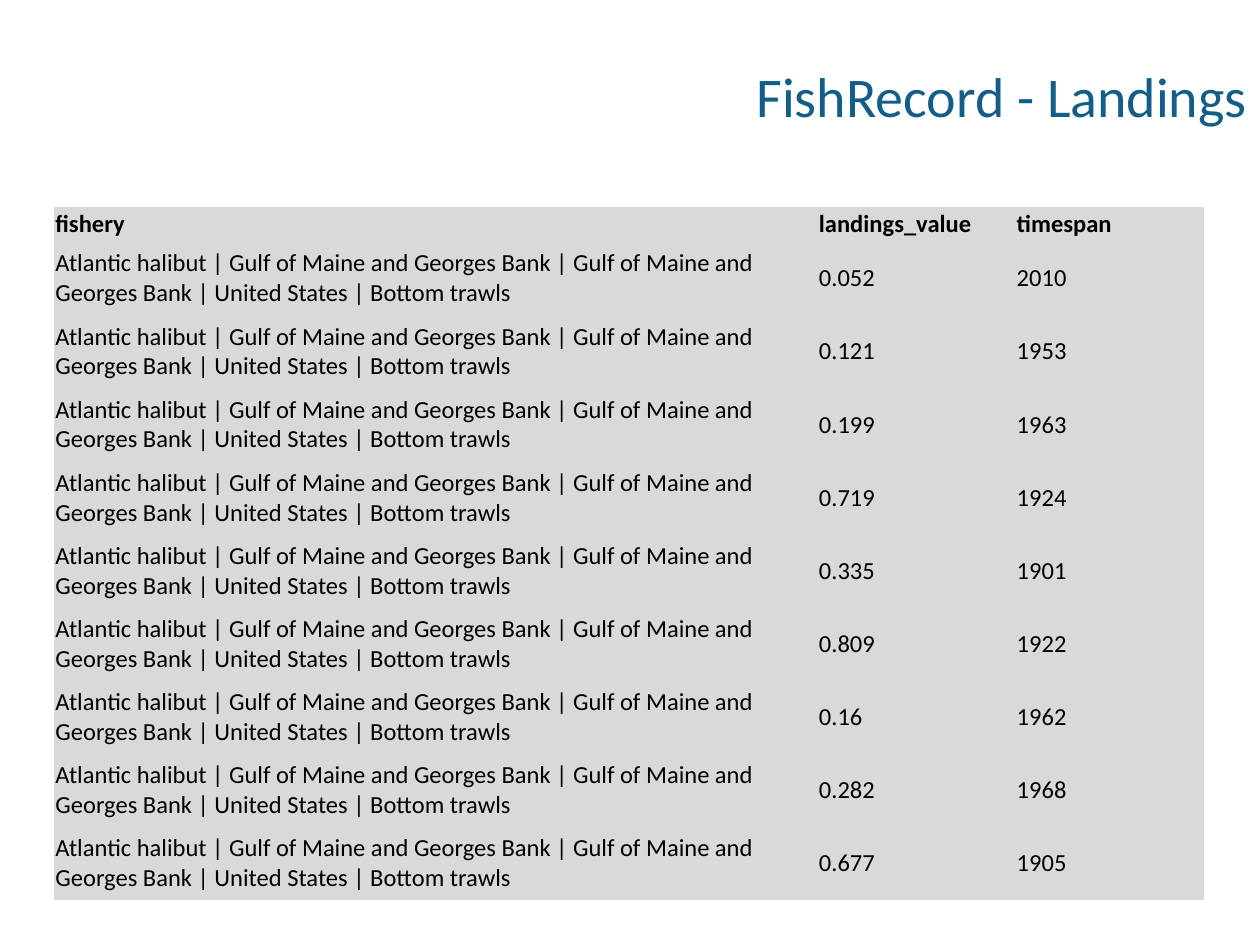
from pptx import Presentation
from pptx.dml.color import RGBColor
from pptx.enum import text
from pptx.util import Inches, Pt

FONT = "Calibri"
FISHERY = ("Atlantic halibut | Gulf of Maine and Georges Bank | "
           "Gulf of Maine and Georges Bank | United States | Bottom trawls")
HEADINGS = ("fishery", "landings_value", "timespan")
LANDINGS = [
    ("0.052", "2010"),
    ("0.121", "1953"),
    ("0.199", "1963"),
    ("0.719", "1924"),
    ("0.335", "1901"),
    ("0.809", "1922"),
    ("0.16", "1962"),
    ("0.282", "1968"),
    ("0.677", "1905"),
]
COLUMN_WIDTHS = (6.06, 1.57, 1.5)
HEADING_HEIGHT, ROW_HEIGHT = 0.28, 0.58
NO_STYLE_NO_GRID = "{2D5ABB26-0587-4C30-8999-92F81FD0307C}"


def color(hex_code):
    return RGBColor.from_string(hex_code)


def add_run(paragraph, wording, size, hex_code, bold=False):
    run = paragraph.add_run()
    run.text = wording
    run.font.name = FONT
    run.font.size = Pt(size)
    run.font.bold = bold
    run.font.color.rgb = color(hex_code)


def set_title(slide, wording):
    title = slide.shapes.title
    title.left, title.top = Inches(2.83), Inches(0.13)
    title.width, title.height = Inches(7.17), Inches(1.25)
    title.text_frame.vertical_anchor = text.MSO_ANCHOR.MIDDLE
    paragraph = title.text_frame.paragraphs[0]
    paragraph.alignment = text.PP_ALIGN.RIGHT
    add_run(paragraph, wording, 32, "125E89")


def fill_cell(cell, wording, bold):
    cell.fill.solid()
    cell.fill.fore_color.rgb = color("D9D9D9")
    cell.vertical_anchor = text.MSO_ANCHOR.MIDDLE
    cell.margin_left = cell.margin_right = Inches(0.01)
    cell.margin_top = cell.margin_bottom = 0
    add_run(cell.text_frame.paragraphs[0], wording, 14, "000000", bold)


def add_landings_table(slide):
    rows = [HEADINGS] + [(FISHERY, *landing) for landing in LANDINGS]
    heights = [HEADING_HEIGHT] + [ROW_HEIGHT] * len(LANDINGS)
    table = slide.shapes.add_table(
        len(rows), len(HEADINGS), Inches(0.43), Inches(1.64),
        Inches(sum(COLUMN_WIDTHS)), Inches(sum(heights))).table
    table.first_row = table.horz_banding = False
    table._tbl.tblPr[0].text = NO_STYLE_NO_GRID

    for column, width in zip(table.columns, COLUMN_WIDTHS):
        column.width = Inches(width)
    for row, height, values in zip(table.rows, heights, rows):
        row.height = Inches(height)
        for cell, value in zip(row.cells, values):
            fill_cell(cell, value, bold=values is HEADINGS)


def main():
    deck = Presentation()
    deck.slide_width, deck.slide_height = Inches(10), Inches(7.5)
    slide = deck.slides.add_slide(deck.slide_layouts[5])
    set_title(slide, "FishRecord - Landings")
    add_landings_table(slide)
    deck.save("out.pptx")


if __name__ == "__main__":
    main()
